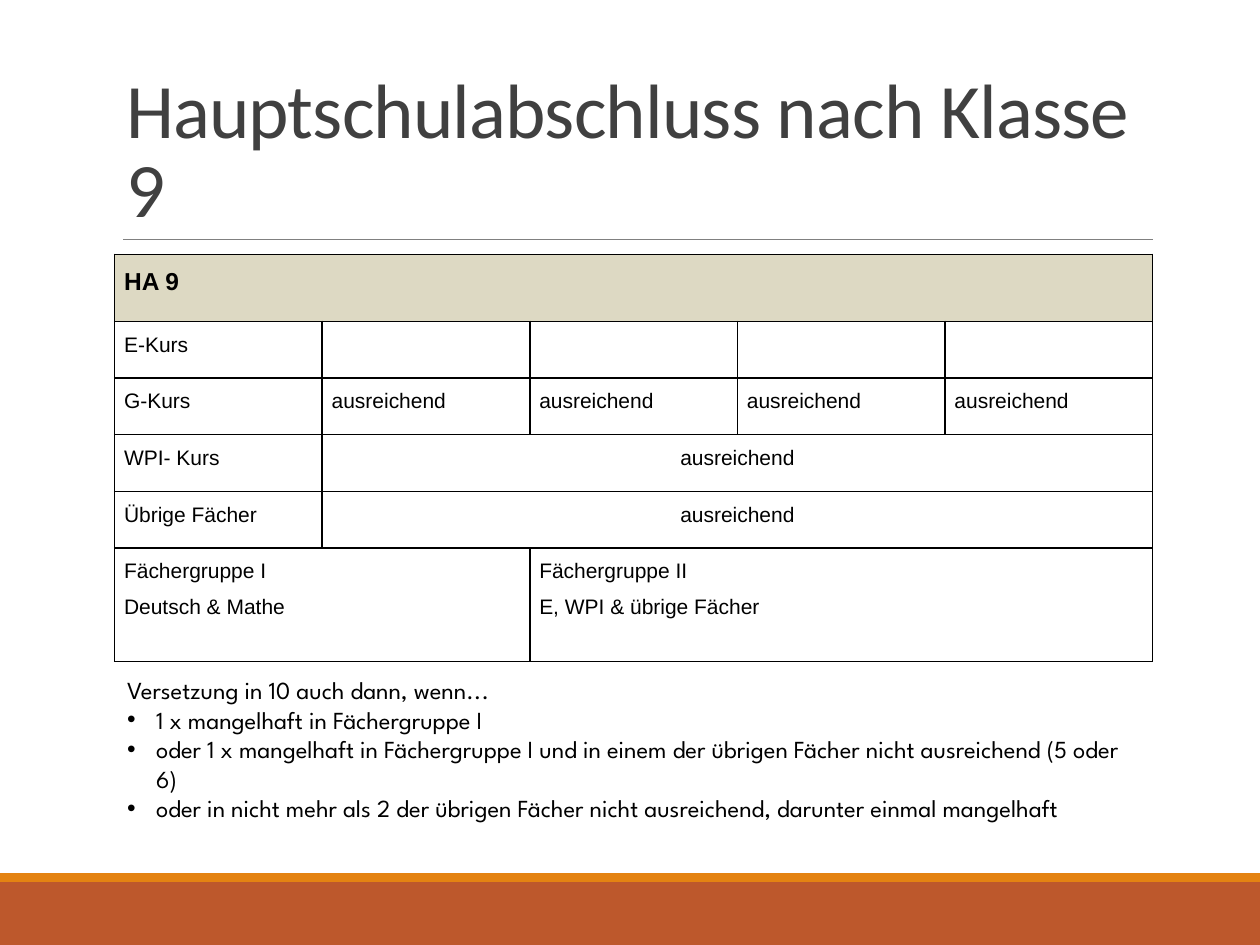
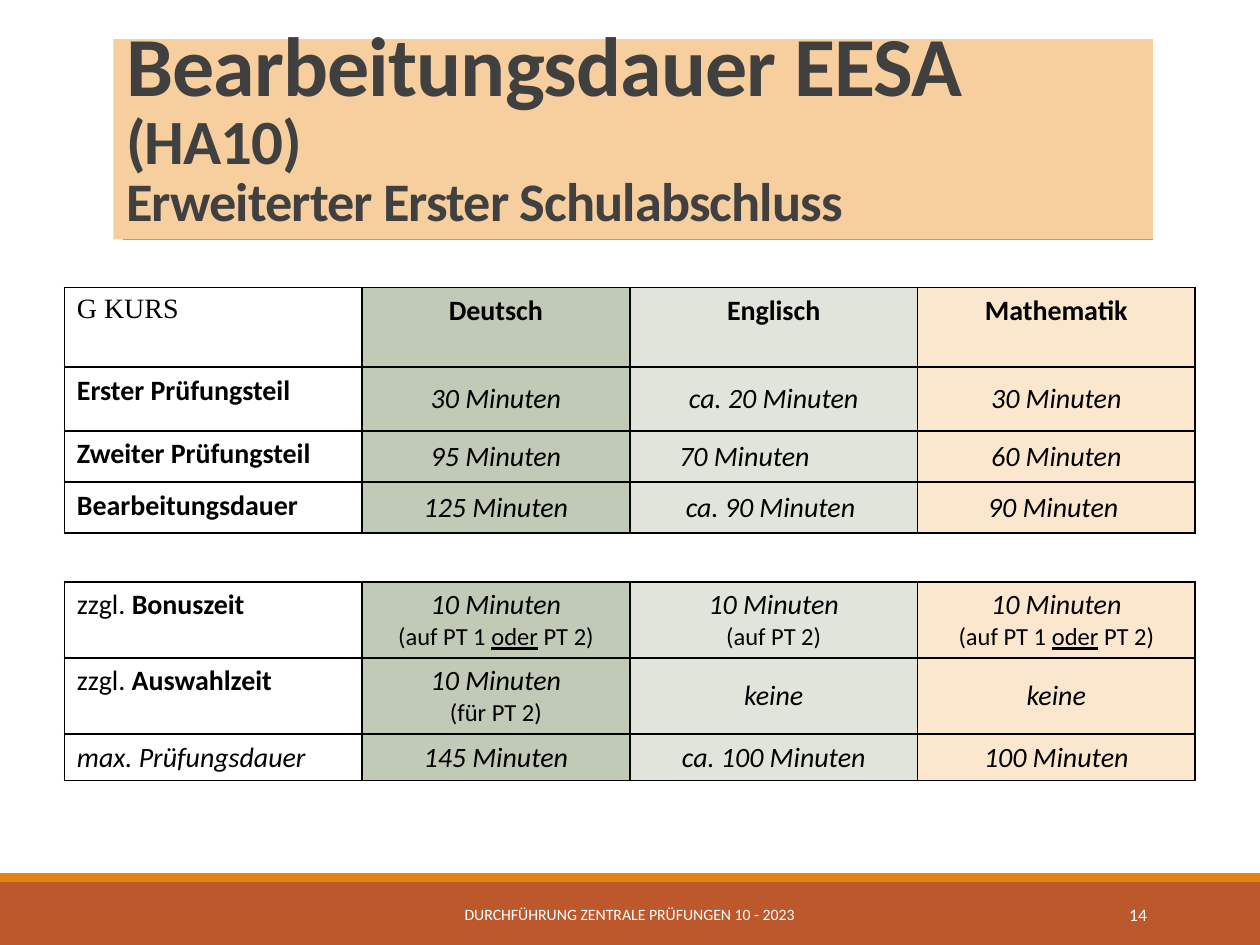
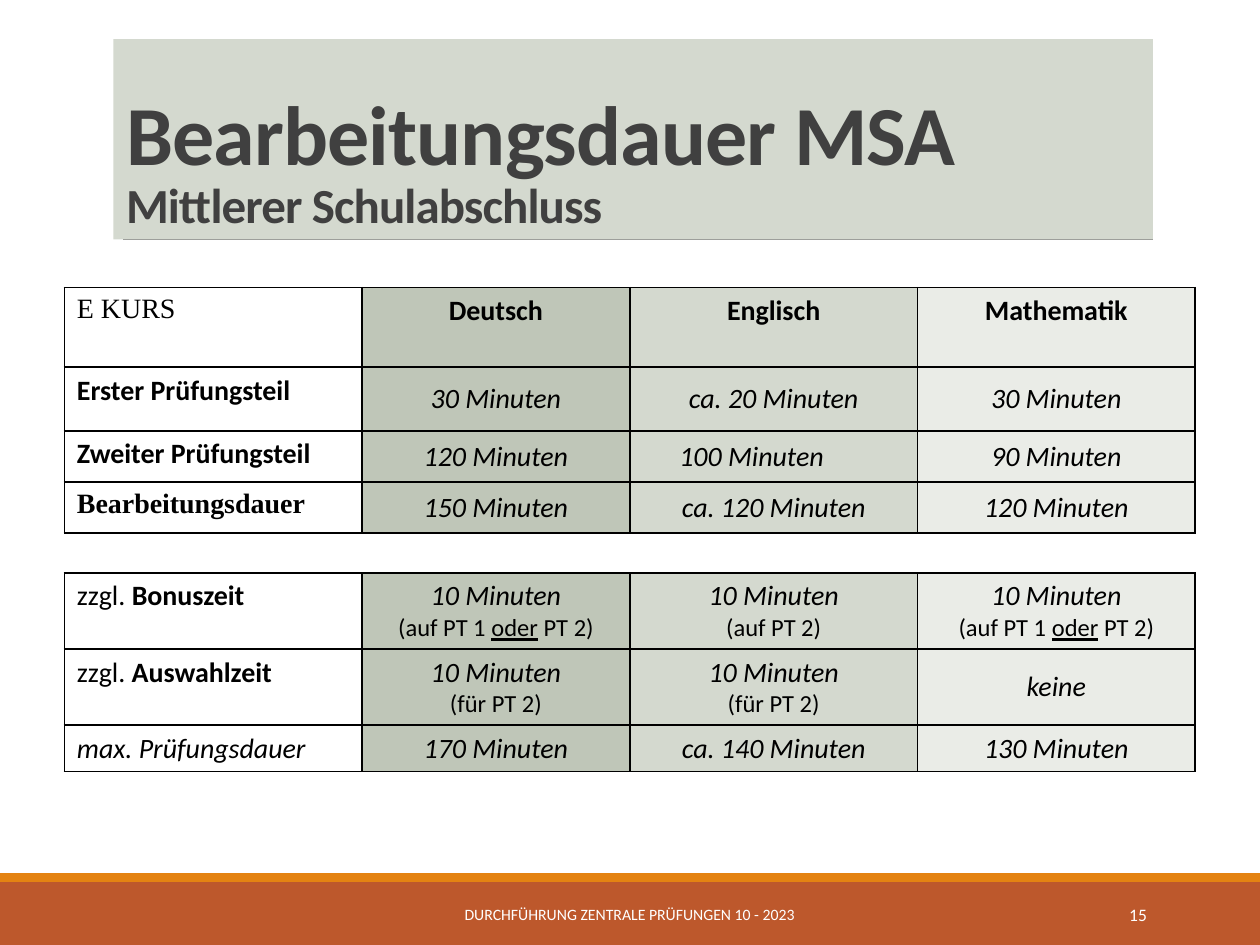
from lxml import etree
from pptx import Presentation
from pptx.dml.color import RGBColor
from pptx.enum.shapes import MSO_CONNECTOR, MSO_SHAPE
from pptx.enum.text import MSO_ANCHOR, MSO_AUTO_SIZE, PP_ALIGN
from pptx.oxml.ns import qn
from pptx.util import Pt

LEFT, MID, RIGHT = PP_ALIGN.LEFT, PP_ALIGN.CENTER, PP_ALIGN.RIGHT
TOP, CENTER, BOTTOM = MSO_ANCHOR.TOP, MSO_ANCHOR.MIDDLE, MSO_ANCHOR.BOTTOM
NO_FIT = MSO_AUTO_SIZE.NONE
RECT, STRAIGHT = MSO_SHAPE.RECTANGLE, MSO_CONNECTOR.STRAIGHT

COLORS = {
    "black": "000000", "white": "FFFFFF", "title": "404040", "rule": "808080",
    "rust": "BD582C", "orange": "E48312", "sand": "DDD9C3",
    "peach": "F7CE9D", "sage": "D4D9CF",
}
SANS, SERIF, ARIAL, LIST = "Calibri", "Times New Roman", "Arial", "League Spartan"

TITLE_BOX = (64.8, 22.3, 594, 114.5)
BANDS = [((0, 504, 720, 36), "rust"), ((0, 499, 720, 5), "orange")]
RULE = (70.5, 136.8, 658.8, 136.8)
FOOTER = "DURCHFÜHRUNG ZENTRALE PRÜFUNGEN 10 - 2023"
FOOTER_BOX, NUMBER_BOX = (217.5, 508.3, 284.4, 28.8), (584.6, 508.3, 77.8, 28.8)

# Grades: each row lists (text, columns spanned)
GRADE_TITLE = [("Hauptschulabschluss nach Klasse 9", 44)]
GRADES = [
    [("HA 9", 5)],
    [("E-Kurs", 1), ("", 1), ("", 1), ("", 1), ("", 1)],
    [("G-Kurs", 1)] + [("ausreichend", 1)] * 4,
    [("WPI- Kurs", 1), ("ausreichend", 4)],
    [("Übrige Fächer", 1), ("ausreichend", 4)],
    [("Fächergruppe I\nDeutsch & Mathe", 2),
     ("Fächergruppe II\nE, WPI & übrige Fächer", 3)],
]
GRADE_AT, GRADE_COLS = (65.5, 145.4), [118.65] * 5
GRADE_ROWS = [38.2] + [32.4] * 4 + [64.8]
RULES_BOX = (65.5, 382.3, 593.3, 108.7)
RULES = [
    "Versetzung in 10 auch dann, wenn...",
    "1 x mangelhaft in Fächergruppe I",
    "oder 1 x mangelhaft in Fächergruppe I und in einem der übrigen Fächer "
    "nicht ausreichend (5 oder 6)",
    "oder in nicht mehr als 2 der übrigen Fächer nicht ausreichend, "
    "darunter einmal mangelhaft",
]

# Exam times: *...* marks bold in labels and underline in notes
SUBJECTS = ["Deutsch", "Englisch", "Mathematik"]
EITHER = "10 Minuten\n(auf PT 1 *oder* PT 2)"
SECOND = "10 Minuten\n(für PT 2)"
BONUS = ["zzgl. *Bonuszeit*", EITHER, "10 Minuten\n(auf PT 2)", EITHER]
FIRST = ["*Erster Prüfungsteil*", "30 Minuten", "ca. 20 Minuten", "30 Minuten"]
TIME_COLS = [170, 153.2, 164.3, 158.7]
TIME_LEFT, TIME_TOP = 36.8, 164.3
TIME_ROWS, EXTRA_ROWS = [45.5, 36.5, 29.2, 29.2], [43.5, 43.5, 26.6]
EXAMS = [
    {
        "title": [("Bearbeitungsdauer EESA ", 48), ("(HA10)\n", 36),
                  ("Erweiterter Erster Schulabschluss", 31)],
        "fill": "peach", "number": "14", "extra_top": 332.5,
        "tints": ["C1CAB6", "E0E4DB", "FBE6CE"], "serif": ["G KURS"],
        "times": [
            ["G KURS"] + SUBJECTS,
            FIRST,
            ["*Zweiter Prüfungsteil*", "95 Minuten", "70 Minuten", "60 Minuten"],
            ["*Bearbeitungsdauer*", "125 Minuten", "ca. 90 Minuten ", "90 Minuten "],
        ],
        "extras": [
            BONUS,
            ["zzgl.* Auswahlzeit*", SECOND, "keine", "keine"],
            ["max. Prüfungsdauer", "145 Minuten", "ca. 100 Minuten", "100 Minuten"],
        ],
    },
    {
        "title": [("Bearbeitungsdauer MSA\n", 48), ("Mittlerer Schulabschluss", 28)],
        "fill": "sage", "number": "15", "extra_top": 327.4,
        "tints": ["BFC6B8", "D4D9CF", "EAECE7"],
        "serif": ["E KURS", "*Bearbeitungsdauer*"],
        "times": [
            ["E KURS"] + SUBJECTS,
            FIRST,
            ["*Zweiter Prüfungsteil*", "120 Minuten", "100 Minuten", "90 Minuten"],
            ["*Bearbeitungsdauer*", "150 Minuten", "ca. 120 Minuten", "120 Minuten"],
        ],
        "extras": [
            BONUS,
            ["zzgl.* Auswahlzeit*", SECOND, SECOND, "keine"],
            ["max. Prüfungsdauer", "170 Minuten", "ca. 140 Minuten", "130 Minuten"],
        ],
    },
]


def pts(box):
    return [Pt(v) for v in box]


def rgb(name):
    return RGBColor.from_string(COLORS.get(name, name))


def paint(part, color):
    part.fill.solid()
    part.fill.fore_color.rgb = rgb(color)


def place(shape, box):
    shape.left, shape.top, shape.width, shape.height = pts(box)


def style(par, font, size, color="black", bold=False, italic=False, align=LEFT):
    par.alignment = align
    par.font.name, par.font.size = font, Pt(size)
    par.font.bold, par.font.italic = bold, italic
    par.font.color.rgb = rgb(color)


def add_runs(par, text, mark):
    """Split text at asterisks and set the font attribute mark on the odd parts."""
    for n, part in enumerate(text.split("*")):
        if part:
            run = par.add_run()
            run.text = part
            if n % 2:
                setattr(run.font, mark, True)


def add_pars(frame, text):
    """Yield a paragraph and its text for each line."""
    for n, line in enumerate(text.split("\n")):
        yield (frame.add_paragraph() if n else frame.paragraphs[0]), line


def add_master(prs, slide):
    """Draw the bands and the rule, then move them to the back of the master."""
    parts = []
    for box, color in BANDS:
        band = slide.shapes.add_shape(RECT, *pts(box))
        paint(band, color)
        band.line.fill.background()
        band.shadow.inherit = False
        parts.append(band)
    rule = slide.shapes.add_connector(STRAIGHT, *pts(RULE))
    rule.line.color.rgb = rgb("rule")
    rule.line.width = Pt(0.5)
    etree.SubElement(rule.element.spPr, qn("a:effectLst"))
    parts.append(rule)
    tree = prs.slide_master.shapes.element
    for n, part in enumerate(parts):
        part.element.xpath(".//p:cNvPr")[0].set("id", str(20 + n))
        tree.insert(2 + n, part.element)


def set_title(slide, runs, bold=False, fill=None):
    title = slide.shapes.title
    place(title, TITLE_BOX)
    if fill:
        paint(title, fill)
    frame = title.text_frame
    frame.auto_size, frame.vertical_anchor = NO_FIT, BOTTOM
    par = frame.paragraphs[0]
    style(par, SANS, runs[-1][1], "title", bold)
    par.line_spacing = 0.85
    par.font._rPr.set("spc", "-50")
    for text, size in runs:
        run = par.add_run()
        run.text = text.rstrip("\n")
        run.font.size = Pt(size)
        if text.endswith("\n"):
            par.add_line_break()


def add_label(slide, box, text, size, align):
    frame = slide.shapes.add_textbox(*pts(box)).text_frame
    frame.word_wrap, frame.vertical_anchor = True, CENTER
    par = frame.paragraphs[0]
    style(par, SANS, size, "white", align=align)
    par.text = text


def add_grid(slide, at, cols, rows):
    """Add a plain table with thin black borders."""
    box = (*at, sum(cols), sum(rows))
    table = slide.shapes.add_table(len(rows), len(cols), *pts(box)).table
    table.first_row = table.horz_banding = False
    for col, width in zip(table.columns, cols):
        col.width = Pt(width)
    for row, height in zip(table.rows, rows):
        row.height = Pt(height)
    for cell in table.iter_cells():
        props = cell._tc.get_or_add_tcPr()
        for side in ("lnL", "lnR", "lnT", "lnB"):
            line = etree.SubElement(props, qn("a:" + side), w=str(Pt(1)))
            fill = etree.SubElement(line, qn("a:solidFill"))
            etree.SubElement(fill, qn("a:srgbClr"), val=COLORS["black"])
        cell.fill.background()
    return table


def add_grades(slide):
    table = add_grid(slide, GRADE_AT, GRADE_COLS, GRADE_ROWS)
    for cell in table.iter_cells():
        cell.margin_left = cell.margin_right = Pt(5.4)
        cell.margin_top = cell.margin_bottom = 0
    for r, row in enumerate(GRADES):
        c = 0
        for text, span in row:
            cell = table.cell(r, c)
            if span > 1:
                cell.merge(table.cell(r, c + span - 1))
            for par, line in add_pars(cell.text_frame, text):
                style(par, ARIAL, 12 if r else 14, bold=r == 0,
                      align=MID if span == 4 else LEFT)
                par.line_spacing = 1.5
                if line:
                    par.text = line
            c += span
    paint(table.cell(0, 0), "sand")


def add_rules(slide):
    body = slide.placeholders[1]
    place(body, RULES_BOX)
    frame = body.text_frame
    frame.auto_size, frame.vertical_anchor = NO_FIT, TOP
    for n, (par, line) in enumerate(add_pars(frame, "\n".join(RULES))):
        style(par, LIST, 14)
        par.space_before = par.space_after = Pt(0)
        par.line_spacing = 1.0
        par.text = line
        props = par._p.get_or_add_pPr()
        indent = Pt(16.5) if n else 0
        props.set("marL", str(indent))
        props.set("indent", str(-indent))
        bullet = etree.Element(qn("a:buChar"), char="•") if n else etree.Element(qn("a:buNone"))
        props.find(qn("a:defRPr")).addprevious(bullet)
        if n:
            bullet.addprevious(etree.Element(qn("a:buFont"), typeface=ARIAL))


def add_times(slide, top, heights, rows, exam):
    table = add_grid(slide, (TIME_LEFT, top), TIME_COLS, heights)
    for r, row in enumerate(rows):
        for c, text in enumerate(row):
            cell = table.cell(r, c)
            head = row[1:] == SUBJECTS
            cell.vertical_anchor = CENTER if c and not head else TOP
            if c:
                paint(cell, exam["tints"][c - 1])
            for par, line in add_pars(cell.text_frame, text):
                if c:
                    note = line.startswith("(")
                    style(par, SANS, 14 if note else 16, bold=head,
                          italic=not head and not note, align=MID)
                    add_runs(par, line, "underline")
                else:
                    font = SERIF if text in exam["serif"] else SANS
                    style(par, font, 16, italic=line.startswith("max."))
                    add_runs(par, line, "bold")
    return table


def add_exam(slide, exam):
    set_title(slide, exam["title"], True, exam["fill"])
    add_label(slide, FOOTER_BOX, FOOTER, 9, MID)
    add_label(slide, NUMBER_BOX, exam["number"], 10, RIGHT)
    table = add_times(slide, TIME_TOP, TIME_ROWS, exam["times"], exam)
    shifted = table.cell(2, 2).text_frame.paragraphs[0]
    shifted.alignment = LEFT
    shifted._p.get_or_add_pPr().set("marL", str(Pt(21)))
    add_times(slide, exam["extra_top"], EXTRA_ROWS, exam["extras"], exam)


def main():
    prs = Presentation()
    prs.slide_width, prs.slide_height = Pt(720), Pt(540)
    slide = prs.slides.add_slide(prs.slide_layouts[1])
    add_master(prs, slide)
    set_title(slide, GRADE_TITLE)
    add_grades(slide)
    add_rules(slide)
    for exam in EXAMS:
        add_exam(prs.slides.add_slide(prs.slide_layouts[5]), exam)
    prs.save("out.pptx")


if __name__ == "__main__":
    main()
